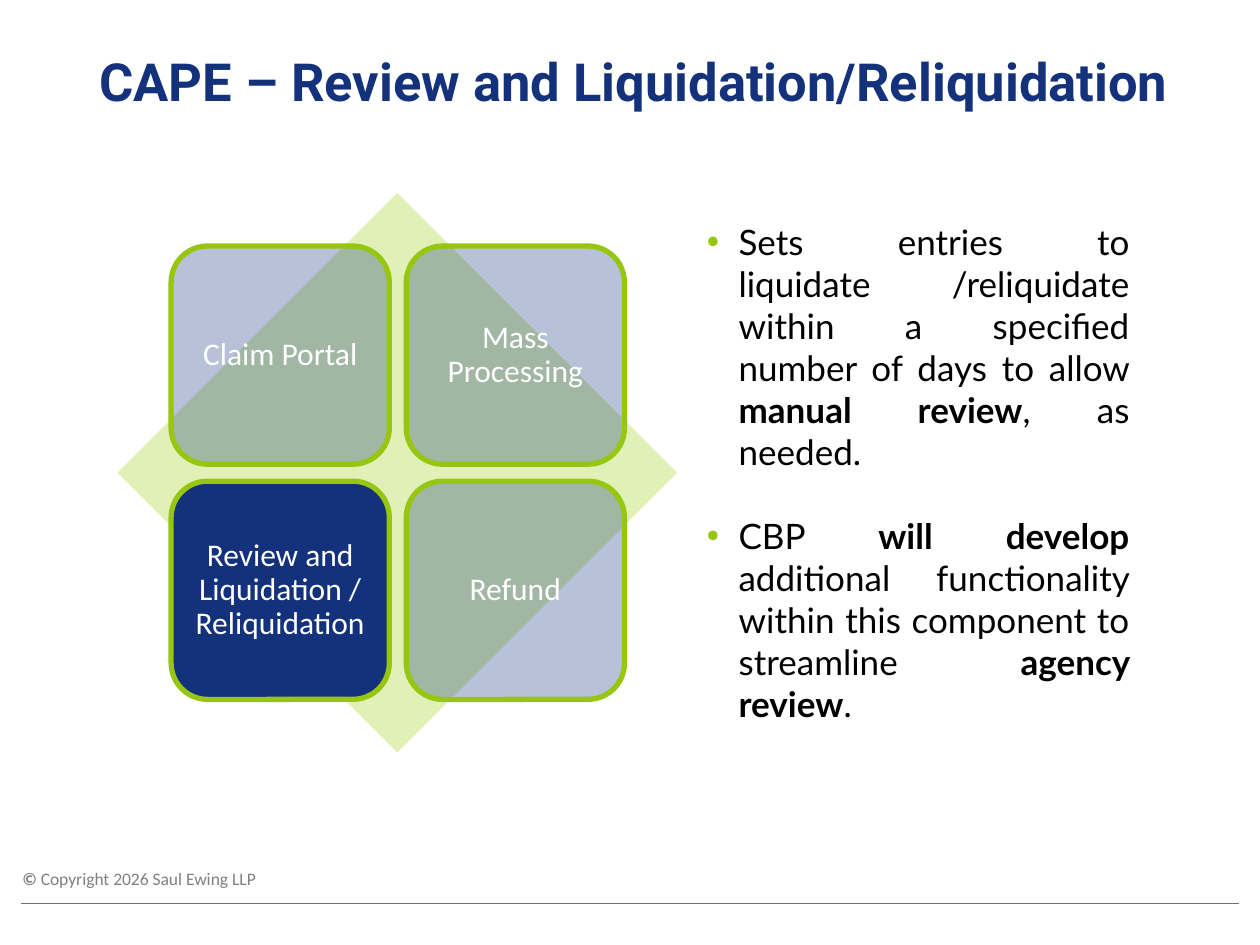
from dataclasses import dataclass

from lxml import etree
from pptx import Presentation
from pptx import util as u
from pptx.dml.color import RGBColor
from pptx.enum import shapes, text
from pptx.oxml import ns


@dataclass(frozen=True)
class Theme:
    navy: str = "13327B"
    green: str = "96C610"
    pale_green: str = "E1F0B7"
    white: str = "FFFFFF"
    black: str = "000000"
    grey: str = "808080"
    rule: str = "767171"
    title_size: int = 30
    body_size: int = 20
    tile_size: int = 18
    footer_size: int = 10
    faded_alpha: int = 30


THEME = Theme()
TILES = [
    ("Claim Portal", True),
    ("Mass Processing", True),
    ("Review and Liquidation / Reliquidation", False),
    ("Refund", True),
]
BULLETS = [
    [
        ("Sets entries to liquidate /reliquidate within a specified number of days to allow ", False),
        ("manual review", True),
        (", as needed.", False),
    ],
    [
        ("CBP ", False),
        ("will develop ", True),
        ("additional functionality within this component to streamline ", False),
        ("agency review", True),
        (".", False),
    ],
]


def rgb(color):
    return RGBColor.from_string(color)


def apply(target, values):
    for name, value in values.items():
        setattr(target, name, value)


def sub(parent, tag, **attrs):
    return etree.SubElement(parent, ns.qn(tag), attrs)


def add_runs(p, runs, font, size, color):
    for words, bold in runs:
        r = p.add_run()
        r.text = words
        apply(r.font, {"name": font, "size": u.Pt(size), "bold": bold})
        r.font.color.rgb = rgb(color)


def add_text(s, left, top, width, height, **frame):
    sp = s.shapes.add_textbox(u.Cm(left), u.Cm(top), u.Cm(width), u.Cm(height))
    apply(sp.text_frame, {"word_wrap": True, **frame})
    return sp.text_frame


def add_filled(parent, kind, left, top, size, color):
    sp = parent.shapes.add_shape(kind, u.Cm(left), u.Cm(top), u.Cm(size), u.Cm(size))
    sp.shadow.inherit = False
    sp.fill.solid()
    sp.fill.fore_color.rgb = rgb(color)
    return sp


def add_tile(grp, left, top, size, label, faded):
    sp = add_filled(grp, shapes.MSO_SHAPE.ROUNDED_RECTANGLE, left, top, size, THEME.navy)
    if faded:
        color = sp.fill._xPr.find(ns.qn("a:solidFill"))[0]
        sub(color, "a:alpha", val=str(THEME.faded_alpha * 1000))
    sp.line.color.rgb = rgb(THEME.green)
    sp.line.width = u.Pt(3)
    tf = sp.text_frame
    inset = u.Cm(0.18)
    apply(tf, {
        "word_wrap": True,
        "vertical_anchor": text.MSO_ANCHOR.MIDDLE,
        "margin_left": inset,
        "margin_right": inset,
        "margin_top": inset,
        "margin_bottom": inset,
    })
    p = tf.paragraphs[0]
    apply(p, {"alignment": text.PP_ALIGN.CENTER, "line_spacing": 0.9})
    add_runs(p, [(label, False)], "Calibri", THEME.tile_size, THEME.white)


def add_matrix(s):
    grp = s.shapes.add_group_shape()
    diamond = add_filled(grp, shapes.MSO_SHAPE.DIAMOND, 2.37, 3.89, 11.28, THEME.pale_green)
    diamond.line.fill.background()
    left, top, size, pitch = 3.45, 4.96, 4.4, 4.74
    for i, (label, faded) in enumerate(TILES):
        row, col = divmod(i, 2)
        add_tile(grp, left + col * pitch, top + row * pitch, size, label, faded)


def add_bullets(s):
    tf = add_text(s, 14, 4.32, 9.02, 10.41)
    for i, runs in enumerate(BULLETS):
        p = tf.add_paragraph() if i else tf.paragraphs[0]
        p.alignment = text.PP_ALIGN.JUSTIFY
        if i:
            p.space_before = u.Pt(24)
        indent = u.Cm(0.64)
        pPr = p._p.get_or_add_pPr()
        pPr.set("marL", str(indent))
        pPr.set("indent", str(-indent))
        sub(sub(pPr, "a:buClr"), "a:srgbClr", val=THEME.green)
        sub(pPr, "a:buFont", typeface="Arial")
        sub(pPr, "a:buChar", char="•")
        add_runs(p, runs, "Lato", THEME.body_size, THEME.black)


def add_title(s):
    tf = add_text(s, 1.75, 0.64, 22.28, 2.13, vertical_anchor=text.MSO_ANCHOR.MIDDLE)
    p = tf.paragraphs[0]
    p.line_spacing = 0.9
    runs = [("CAPE – Review and Liquidation/Reliquidation", True)]
    add_runs(p, runs, "Roboto", THEME.title_size, THEME.navy)


def add_footer(s):
    tf = add_text(s, 0.2, 17.37, 5.28, 0.69, word_wrap=False)
    runs = [("© ", True), ("Copyright 2026 Saul Ewing LLP", False)]
    add_runs(tf.paragraphs[0], runs, "Calibri", THEME.footer_size, THEME.grey)
    y = u.Cm(18.21)
    line = s.shapes.add_connector(
        shapes.MSO_CONNECTOR.STRAIGHT, u.Cm(0.43), y, u.Cm(24.97), y
    )
    line.line.color.rgb = rgb(THEME.rule)
    line.line.width = u.Pt(0.5)
    sub(line._element.spPr, "a:effectLst")


def main():
    prs = Presentation()
    apply(prs, {"slide_width": u.Cm(25.4), "slide_height": u.Cm(19.05)})
    s = prs.slides.add_slide(prs.slide_layouts[6])
    add_footer(s)
    add_bullets(s)
    add_matrix(s)
    add_title(s)
    prs.save("out.pptx")


if __name__ == "__main__":
    main()
